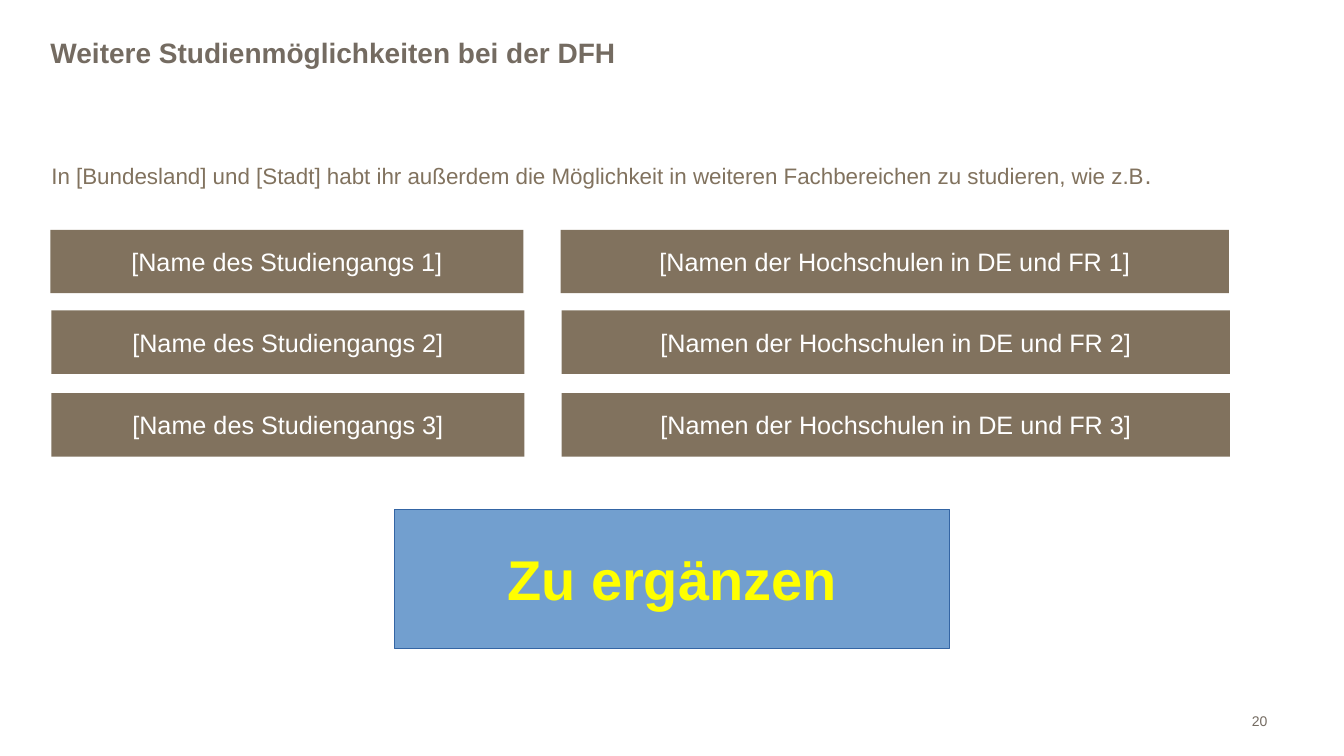
import pptx
import pptx.util
import pptx.dml.color
import pptx.enum.shapes
import pptx.enum.text
from pptx.util import Inches

COLORS = {
    "brown": "81725E",
    "grey": "746B61",
    "white": "FFFFFF",
    "blue": "729FCF",
    "blue_line": "3465A4",
    "yellow": "FFFF00",
}
ALIGN = pptx.enum.text.PP_ALIGN
ANCHOR = pptx.enum.text.MSO_ANCHOR


def rgb(name):
    return pptx.dml.color.RGBColor.from_string(COLORS[name])


def set_frame(tf, anchor, side):
    tf.word_wrap = True
    tf.auto_size = pptx.enum.text.MSO_AUTO_SIZE.NONE
    tf.vertical_anchor = anchor
    tf.margin_left = tf.margin_right = Inches(side)
    tf.margin_top = tf.margin_bottom = Inches(0.05)


def add_run(p, text, size, color, bold=False):
    r = p.add_run()
    r.text = text
    r.font.name = "Arial"
    r.font.size = pptx.util.Pt(size)
    r.font.bold = bold
    r.font.color.rgb = rgb(color)


def write(sp, runs, align=ALIGN.LEFT, anchor=ANCHOR.TOP, side=0, spacing=None):
    """Fill a shape with one paragraph of (text, size, color, bold) runs."""
    set_frame(sp.text_frame, anchor, side)
    p = sp.text_frame.paragraphs[0]
    p.alignment = align
    p.space_before = pptx.util.Pt(0)
    if spacing:
        p.line_spacing = spacing
    for run in runs:
        add_run(p, *run)


def set_title(s, text):
    sp = s.shapes.title
    sp.left, sp.top = Inches(0.5), Inches(0.37)
    sp.width, sp.height = Inches(9.5), Inches(0.37)
    write(sp, [(text, 20, "grey", True)], spacing=0.8)


def add_text(s, x, y, w, h, runs, **layout):
    sp = s.shapes.add_textbox(Inches(x), Inches(y), Inches(w), Inches(h))
    write(sp, runs, **layout)


def add_box(s, x, y, w, h, fill, run, line=None):
    sp = s.shapes.add_shape(pptx.enum.shapes.MSO_SHAPE.RECTANGLE,
                            Inches(x), Inches(y), Inches(w), Inches(h))
    sp.shadow.inherit = False
    sp.fill.solid()
    sp.fill.fore_color.rgb = rgb(fill)
    if line:
        sp.line.color.rgb = rgb(line)
        sp.line.width = pptx.util.Pt(0)
    else:
        sp.line.fill.background()
    write(sp, [run], align=ALIGN.CENTER, anchor=ANCHOR.MIDDLE, side=0.1)


def main():
    prs = pptx.Presentation()
    prs.slide_width, prs.slide_height = Inches(13.33), Inches(7.5)
    s = prs.slides.add_slide(prs.slide_layouts[5])

    # Title and introduction
    set_title(s, "Weitere Studienmöglichkeiten bei der DFH")
    intro = ("In [Bundesland] und [Stadt] habt ihr außerdem die Möglichkeit "
             "in weiteren Fachbereichen zu studieren, wie z.B")
    add_text(s, 0.51, 1.59, 12.33, 0.34,
             [(intro, 16, "brown"), (".", 18, "brown")], spacing=0.8)

    # Study programmes and their universities
    rows = [(0.5, 2.28), (0.51, 3.08), (0.51, 3.9)]
    columns = [(0, 4.69, "[Name des Studiengangs {}]"),
               (5.06, 6.63, "[Namen der Hochschulen in DE und FR {}]")]
    for number, (left, top) in enumerate(rows, 1):
        for offset, width, label in columns:
            add_box(s, left + offset, top, width, 0.63, "brown",
                    (label.format(number), 18, "white"))

    # Reminder box
    add_box(s, 3.91, 5.05, 5.51, 1.38, "blue",
            ("Zu ergänzen", 40, "yellow", True), line="blue_line")

    # Slide number
    add_text(s, 9.56, 6.95, 3.11, 0.4, [("20", 10, "grey")],
             align=ALIGN.RIGHT, anchor=ANCHOR.MIDDLE, side=0.1)

    prs.save("out.pptx")


if __name__ == "__main__":
    main()
